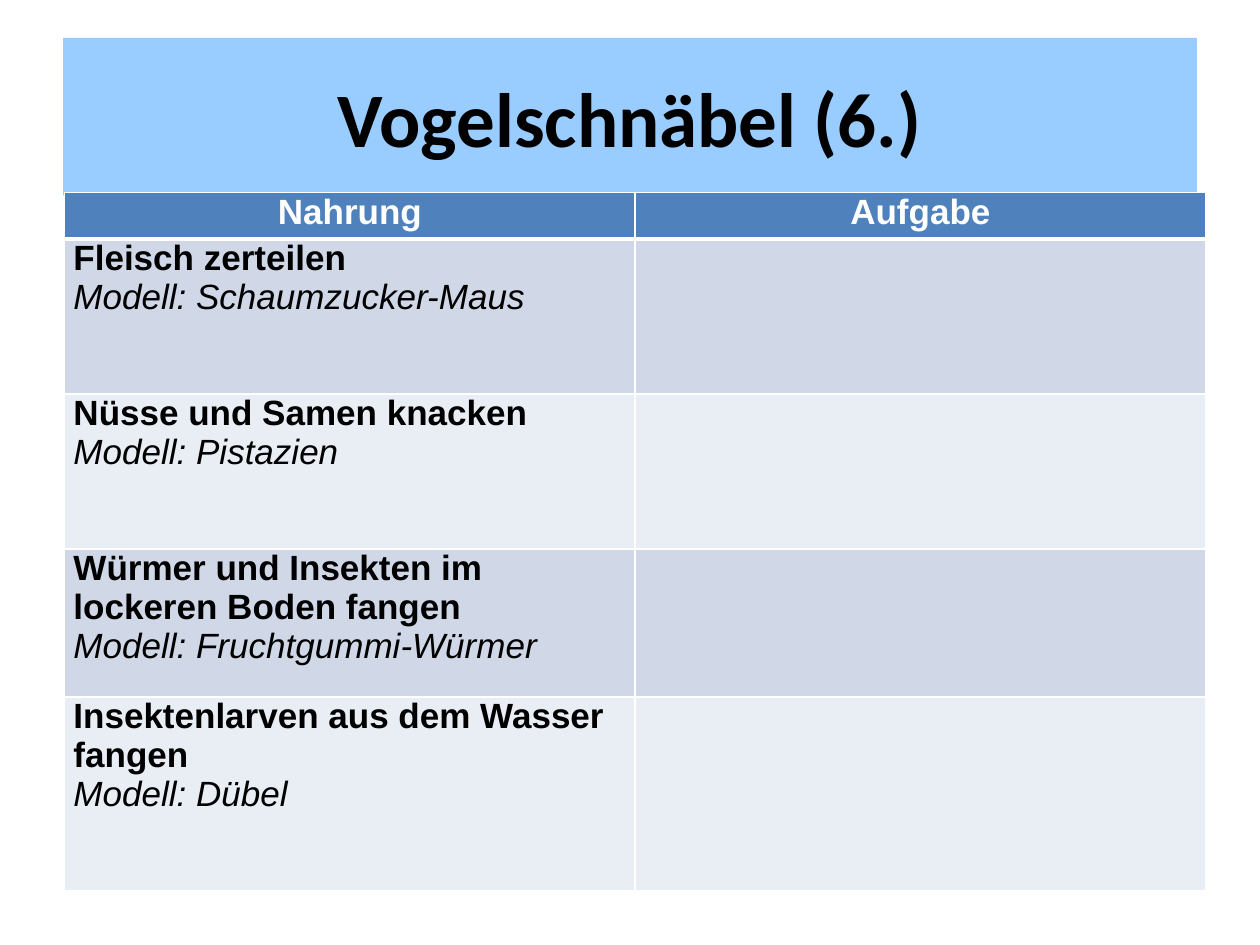
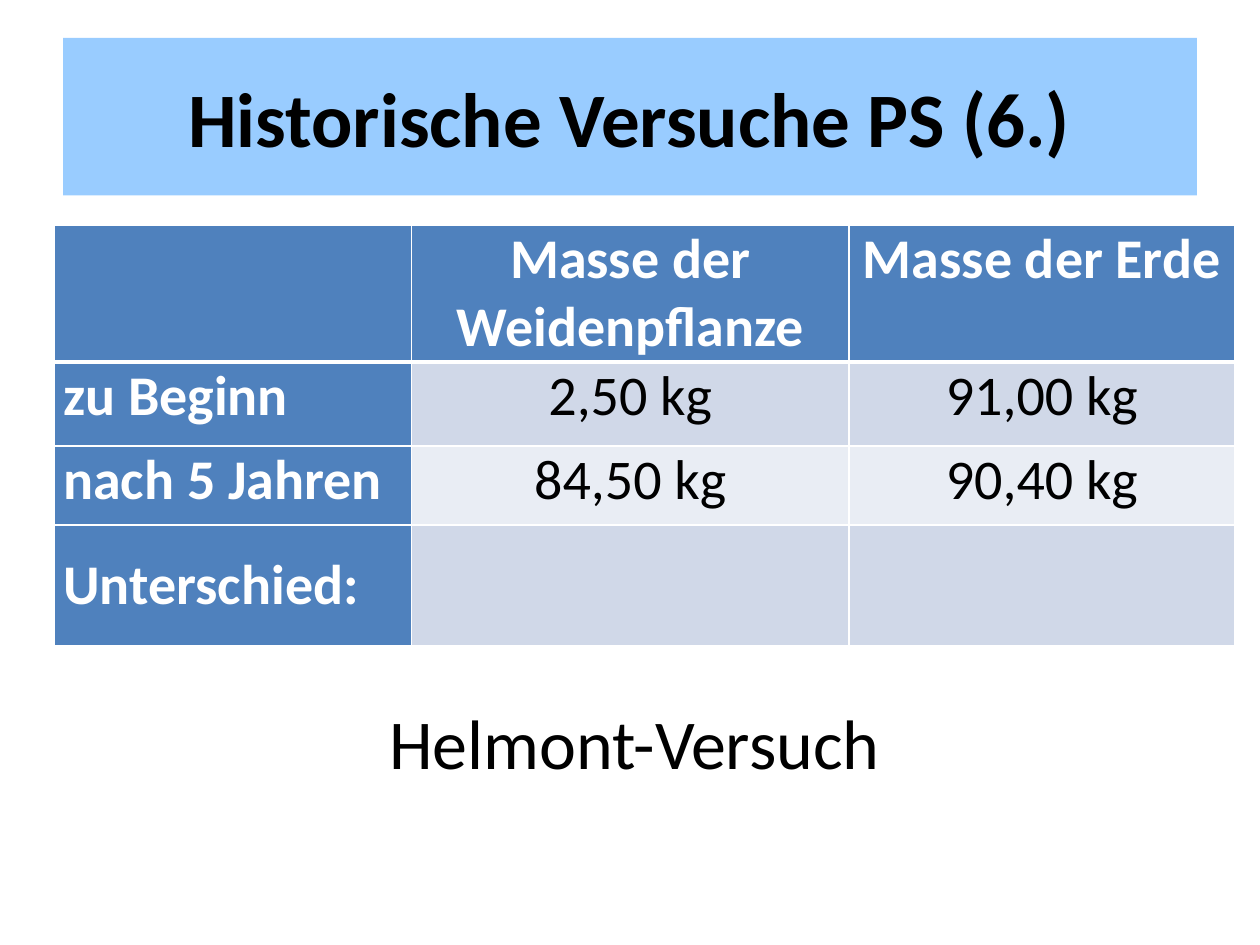
from lxml.etree import SubElement
from pptx import Presentation
from pptx.dml.color import RGBColor
from pptx.enum.text import MSO_ANCHOR, PP_ALIGN
from pptx.oxml.ns import qn
from pptx.util import Pt

BAND_BLUE = RGBColor(0x99, 0xCC, 0xFF)
HEADER_BLUE = RGBColor(0x4F, 0x81, 0xBD)
ROW_TINTS = [RGBColor(0xD0, 0xD8, 0xE8), RGBColor(0xE9, 0xED, 0xF4)]
BLACK = RGBColor(0, 0, 0)
WHITE = RGBColor(0xFF, 0xFF, 0xFF)


def add_run(paragraph, text, font, size, color, bold=False, italic=False):
    run = paragraph.add_run()
    run.text = text
    run.font.name = font
    run.font.size = Pt(size)
    run.font.color.rgb = color
    run.font.bold = bold
    run.font.italic = italic


def add_grid(slide, left, top, widths, heights, header_columns):
    """Add a table with white rules, a blue header and alternating row tints."""
    grid = slide.shapes.add_table(len(heights), len(widths), Pt(left), Pt(top),
                                  Pt(sum(widths)), Pt(sum(heights))).table
    for column, width in zip(grid.columns, widths):
        column.width = Pt(width)
    for r, height in enumerate(heights):
        grid.rows[r].height = Pt(height)
        for c in range(len(widths)):
            cell = grid.cell(r, c)
            cell.margin_left = cell.margin_right = Pt(5)
            cell.margin_top = cell.margin_bottom = 0
            for side in "LRTB":
                under_header = (r, side) in [(0, "B"), (1, "T")]
                rule = SubElement(cell._tc.get_or_add_tcPr(), qn(f"a:ln{side}"),
                                  w=str(Pt(3 if under_header else 1)))
                rule_fill = SubElement(rule, qn("a:solidFill"))
                SubElement(rule_fill, qn("a:srgbClr"), val=str(WHITE))
            cell.fill.solid()
            is_header = r == 0 or c < header_columns
            cell.fill.fore_color.rgb = HEADER_BLUE if is_header else ROW_TINTS[(r - 1) % 2]
    return grid


deck = Presentation()
deck.slide_width = Pt(720)
deck.slide_height = Pt(540)

# Both slides share the blue title band
slides = []
for heading in ["Vogelschnäbel (6.)", "Historische Versuche PS (6.)"]:
    slide = deck.slides.add_slide(deck.slide_layouts[5])
    band = slide.shapes.title
    band.left, band.top, band.width, band.height = Pt(36), Pt(21.6), Pt(648), Pt(90)
    band.fill.solid()
    band.fill.fore_color.rgb = BAND_BLUE
    band.text_frame.vertical_anchor = MSO_ANCHOR.MIDDLE
    line = band.text_frame.paragraphs[0]
    line.alignment = PP_ALIGN.CENTER
    add_run(line, heading, "Calibri", 44, BLACK, bold=True)
    slides.append(slide)
beak_slide, history_slide = slides

# Beaks: food and its model on the left, empty task column on the right
foods = [
    ("Fleisch zerteilen", "Modell: Schaumzucker-Maus"),
    ("Nüsse und Samen knacken", "Modell: Pistazien"),
    ("Würmer und Insekten im lockeren Boden fangen", "Modell: Fruchtgummi-Würmer"),
    ("Insektenlarven aus dem Wasser fangen", "Modell: Dübel"),
]
beaks = add_grid(beak_slide, 37, 110, [326, 326], [26.6, 88.6, 88.6, 84.5, 110.9],
                 header_columns=0)
for c, label in enumerate(["Nahrung", "Aufgabe"]):
    line = beaks.cell(0, c).text_frame.paragraphs[0]
    line.alignment = PP_ALIGN.CENTER
    add_run(line, label, "Arial", 20, WHITE, bold=True)
for r, (food, model) in enumerate(foods, start=1):
    frame = beaks.cell(r, 0).text_frame
    add_run(frame.paragraphs[0], food, "Arial", 20, BLACK, bold=True)
    add_run(frame.add_paragraph(), model, "Arial", 20, BLACK, italic=True)

# Historical experiment: masses at the start and after five years
masses = [
    ["", "Masse der Weidenpflanze", "Masse der Erde"],
    ["zu Beginn", "2,50 kg", "91,00 kg"],
    ["nach 5 Jahren", "84,50 kg", "90,40 kg"],
    ["Unterschied:", "", ""],
]
experiment = add_grid(history_slide, 31.2, 128.5, [204, 250, 220.5], [69, 48, 45.4, 69],
                      header_columns=1)
for r, row in enumerate(masses):
    for c, entry in enumerate(row):
        if entry:
            is_header = r == 0 or c == 0
            line = experiment.cell(r, c).text_frame.paragraphs[0]
            line.alignment = PP_ALIGN.CENTER if c else PP_ALIGN.LEFT
            add_run(line, entry, "Calibri", 32, WHITE if is_header else BLACK, bold=is_header)
experiment.cell(3, 0).vertical_anchor = MSO_ANCHOR.MIDDLE

caption = history_slide.shapes.add_textbox(Pt(31), Pt(396), Pt(663), Pt(55.5)).text_frame
caption.word_wrap = True
caption.paragraphs[0].alignment = PP_ALIGN.CENTER
add_run(caption.paragraphs[0], "Helmont-Versuch", "Calibri", 40, BLACK)

deck.save("out.pptx")
